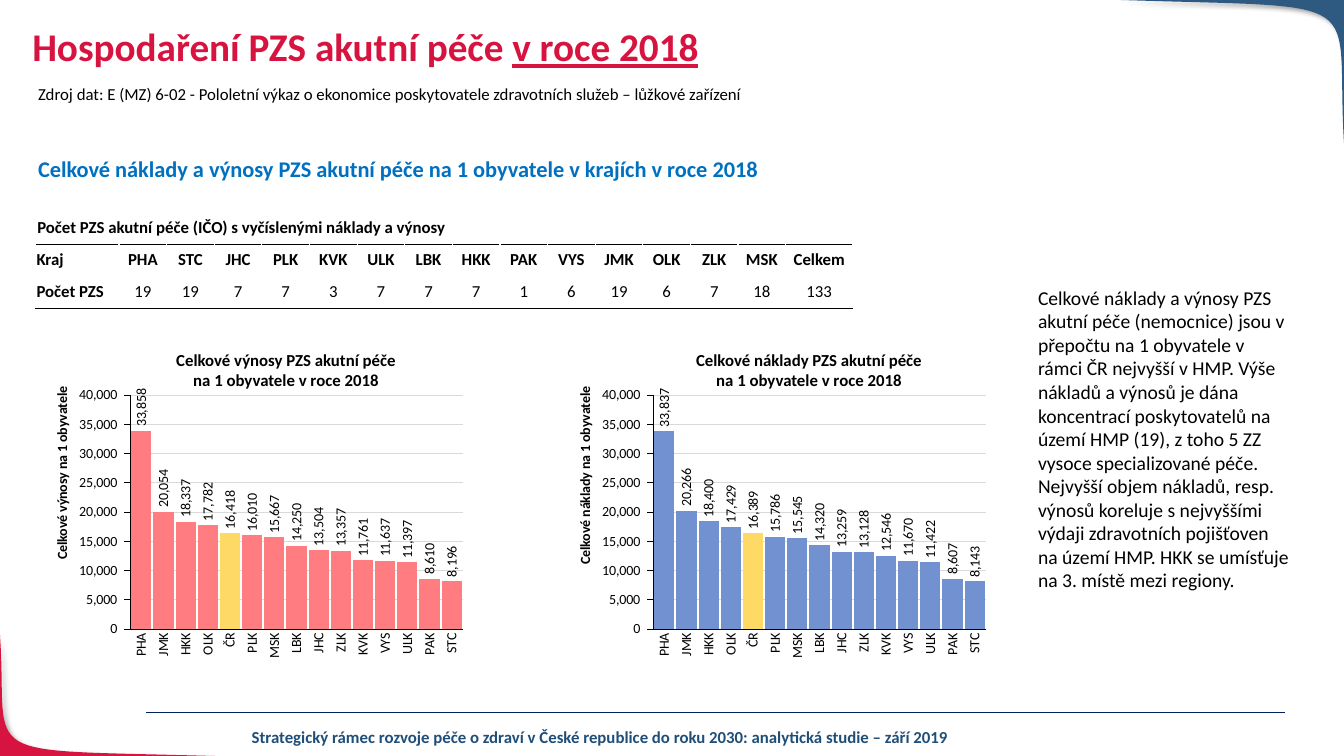
import pptx
import pptx.chart.data
import pptx.dml.color
import pptx.enum.chart
import pptx.enum.shapes
import pptx.enum.text
import pptx.oxml
import pptx.oxml.ns
import pptx.oxml.xmlchemy
import pptx.util

Cm = pptx.util.Cm
Pt = pptx.util.Pt
RGBColor = pptx.dml.color.RGBColor
ALIGN = pptx.enum.text.PP_ALIGN
ANCHOR = pptx.enum.text.MSO_ANCHOR
qn = pptx.oxml.ns.qn

BLACK = RGBColor(0x00, 0x00, 0x00)
WHITE = RGBColor(0xFF, 0xFF, 0xFF)
CRIMSON = RGBColor(0xD7, 0x14, 0x40)
STEEL = RGBColor(0x2E, 0x59, 0x80)
NAVY = RGBColor(0x00, 0x20, 0x60)
FOOTER_BLUE = RGBColor(0x1F, 0x4E, 0x79)
HEADING_BLUE = RGBColor(0x00, 0x70, 0xC0)
PINK = RGBColor(0xFF, 0x7C, 0x80)
PERIWINKLE = RGBColor(0x71, 0x91, 0xD1)
YELLOW = RGBColor(0xFF, 0xD9, 0x66)
GRID_GREY = RGBColor(0xD9, 0xD9, 0xD9)

FONT = "Calibri"
NUMBER_FORMAT = "#,##0_ ;[Red]\\-#,##0\\ "
NATIONAL = "ČR"
REGIONS = "PHA JMK HKK OLK ČR PLK MSK LBK JHC ZLK KVK VYS ULK PAK STC".split()
REVENUES = [33858, 20054, 18337, 17782, 16418, 16010, 15667, 14250,
            13504, 13357, 11761, 11637, 11397, 8610, 8196]
COSTS = [33837, 20266, 18400, 17429, 16389, 15786, 15545, 14320,
         13259, 13128, 12546, 11670, 11422, 8607, 8143]
PROVIDER_ROWS = [
    "Kraj PHA STC JHC PLK KVK ULK LBK HKK PAK VYS JMK OLK ZLK MSK Celkem".split(),
    ["Počet PZS", *"19 19 7 7 3 7 7 7 1 6 19 6 7 18 133".split()],
]
COMMENTARY = (
    "Celkové náklady a výnosy PZS akutní péče (nemocnice) jsou v přepočtu na 1 obyvatele "
    "v rámci ČR nejvyšší v HMP. Výše nákladů a výnosů je dána koncentrací poskytovatelů "
    "na území HMP (19), z toho 5 ZZ vysoce specializované péče. Nejvyšší objem nákladů, "
    "resp. výnosů koreluje s nejvyššími výdaji zdravotních pojišťoven na území HMP. "
    "HKK se umísťuje na 3. místě mezi regiony."
)


def style_font(font, size, color=BLACK, bold=False):
    font.name = FONT
    font.size = Pt(size)
    font.bold = bold
    font.color.rgb = color


def add_text(slide, box, lines, size, color=BLACK, bold=False,
             align=ALIGN.LEFT, anchor=ANCHOR.TOP, wrap=True):
    frame = slide.shapes.add_textbox(*map(Cm, box)).text_frame
    frame.word_wrap = wrap
    frame.vertical_anchor = anchor
    frame.text = "\n".join(lines)
    for paragraph in frame.paragraphs:
        paragraph.alignment = align
        style_font(paragraph.font, size, color, bold)


def add_corner(slide, box, color, rotation=0):
    left, top, width, height = map(Cm, box)
    controls = [(0, 0), (1.15, 0.06), (0.96, -0.06), (1, 1)]
    steps = 32

    def curve_point(t):
        weights = [(1 - t) ** 3, 3 * t * (1 - t) ** 2, 3 * t * t * (1 - t), t ** 3]
        x = sum(w * c[0] for w, c in zip(weights, controls))
        y = sum(w * c[1] for w, c in zip(weights, controls))
        return round(left + x * width), round(top + y * height)

    outline = slide.shapes.build_freeform(left, top)
    edge = [curve_point(step / steps) for step in range(1, steps + 1)]
    outline.add_line_segments(edge + [(left + width, top)], close=True)
    corner = outline.convert_to_shape()
    corner.rotation = rotation
    corner.fill.solid()
    corner.fill.fore_color.rgb = color
    corner.line.fill.background()
    corner.shadow.inherit = False
    effects = corner._element.spPr.find(qn("a:effectLst"))
    effects.append(pptx.oxml.parse_xml(
        f'<a:outerShdw {pptx.oxml.ns.nsdecls("a")} blurRad="{Pt(4)}" dist="{Pt(3)}" '
        'dir="2700000"><a:srgbClr val="000000"><a:alpha val="40000"/></a:srgbClr></a:outerShdw>'))


def add_footer(slide, box):
    left, top, width, height = box
    rule = slide.shapes.add_connector(
        pptx.enum.shapes.MSO_CONNECTOR.STRAIGHT,
        Cm(left), Cm(top), Cm(left + width), Cm(top))
    rule.line.color.rgb = NAVY
    rule.line.width = Pt(0.5)
    rule._element.spPr.append(pptx.oxml.xmlchemy.OxmlElement("a:effectLst"))
    add_text(slide, (left + 1.17, top + 0.25, 20.55, height - 0.25),
             ["Strategický rámec rozvoje péče o zdraví v České republice do roku 2030: "
              "analytická studie – září 2019"],
             12, FOOTER_BLUE, True, ALIGN.CENTER)


def add_heading(slide, box):
    left, top, width, height = box
    title = slide.shapes.title
    title.left, title.top, title.width, title.height = map(Cm, box)
    frame = title.text_frame
    frame.auto_size = pptx.enum.text.MSO_AUTO_SIZE.NONE
    frame.vertical_anchor = ANCHOR.TOP
    paragraph = frame.paragraphs[0]
    paragraph.alignment = ALIGN.LEFT
    paragraph.line_spacing = 0.9
    style_font(paragraph.font, 28, CRIMSON, True)
    paragraph.add_run().text = "Hospodaření PZS akutní péče "
    year = paragraph.add_run()
    year.text = "v roce 2018"
    year.font.underline = True
    add_text(slide, (left + 0.15, top + 1.4, 18.44, 0.76),
             ["Zdroj dat: E (MZ) 6-02 - Pololetní výkaz o ekonomice poskytovatele "
              "zdravotních služeb – lůžkové zařízení"], 12, wrap=False)
    add_text(slide, (left + 0.15, top + 3.2, 19.25, 0.94),
             ["Celkové náklady a výnosy PZS akutní péče na 1 obyvatele v krajích v roce 2018"],
             16, HEADING_BLUE, True)


def add_border(cell, side):
    cell._tc.get_or_add_tcPr().insert(0, pptx.oxml.parse_xml(
        f'<a:{side} {pptx.oxml.ns.nsdecls("a")} w="{Pt(0.75)}"><a:solidFill>'
        f'<a:srgbClr val="{BLACK}"/></a:solidFill></a:{side}>'))


def add_provider_table(slide, box):
    left, top, width, height = box
    add_text(slide, (left - 0.2, top - 0.84, 10.87, 0.76),
             ["Počet PZS akutní péče (IČO) s vyčíslenými náklady a výnosy"], 12, bold=True)
    table = slide.shapes.add_table(2, len(PROVIDER_ROWS[0]), *map(Cm, box)).table
    table.first_row = table.horz_banding = False
    first, last = 2.11, 1.69
    region = (width - first - last) / (len(PROVIDER_ROWS[0]) - 2)
    for index, column in enumerate(table.columns):
        column.width = Cm({0: first, len(table.columns) - 1: last}.get(index, region))
    table.rows[0].height = Cm(0.71)
    table.rows[1].height = Cm(height - 0.71)
    for r, values in enumerate(PROVIDER_ROWS):
        for c, value in enumerate(values):
            cell = table.cell(r, c)
            cell.text = value
            cell.vertical_anchor = ANCHOR.MIDDLE
            cell.margin_left = cell.margin_right = cell.margin_top = Cm(0.03)
            cell.margin_bottom = 0
            cell.fill.solid()
            cell.fill.fore_color.rgb = WHITE
            add_border(cell, "lnB" if r else "lnT")
            paragraph = cell.text_frame.paragraphs[0]
            paragraph.alignment = ALIGN.CENTER if c else ALIGN.LEFT
            style_font(paragraph.font, 12, bold=r == 0 or c == 0)


def turn_upright(element):
    body = element.find(".//" + qn("a:bodyPr"))
    body.set("rot", "-5400000")
    body.set("vert", "horz")


def manual_layout(target, **values):
    entries = "".join(f'<c:{key} val="{value}"/>' for key, value in values.items())
    return pptx.oxml.parse_xml(
        f'<c:layout {pptx.oxml.ns.nsdecls("c")}><c:manualLayout>{target}'
        f'<c:xMode val="edge"/><c:yMode val="edge"/>{entries}</c:manualLayout></c:layout>')


def place(parent, layout, index):
    for existing in parent.findall(qn("c:layout")):
        parent.remove(existing)
    parent.insert(index, layout)


def add_region_chart(slide, box, subject, values, color):
    left, top, width, height = box
    data = pptx.chart.data.CategoryChartData(number_format=NUMBER_FORMAT)
    data.categories = REGIONS
    data.add_series(f"Celkové {subject}", values)
    chart = slide.shapes.add_chart(
        pptx.enum.chart.XL_CHART_TYPE.COLUMN_CLUSTERED, *map(Cm, box), data).chart
    chart.has_legend = chart.has_title = False
    style_font(chart.font, 10)
    plot = chart.plots[0]
    plot.vary_by_categories = False
    plot.gap_width = 10
    bars = plot.series[0]
    bars.format.fill.solid()
    bars.format.fill.fore_color.rgb = color
    national = bars.points[REGIONS.index(NATIONAL)].format.fill
    national.solid()
    national.fore_color.rgb = YELLOW
    labels = bars.data_labels
    labels.show_value = True
    labels.number_format = NUMBER_FORMAT
    labels.number_format_is_linked = False
    labels.position = pptx.enum.chart.XL_LABEL_POSITION.OUTSIDE_END
    style_font(labels.font, 10)
    turn_upright(labels._element)

    ticks = pptx.enum.chart.XL_TICK_MARK
    for axis, mark in ((chart.category_axis, ticks.NONE), (chart.value_axis, ticks.OUTSIDE)):
        axis.major_tick_mark = mark
        axis.minor_tick_mark = ticks.NONE
        axis.format.line.color.rgb = BLACK
        axis.format.line.width = Pt(0.75)
        style_font(axis.tick_labels.font, 10)
    turn_upright(chart.category_axis._element)
    amounts = chart.value_axis
    amounts.minimum_scale, amounts.maximum_scale = 0, 40000
    amounts.tick_labels.number_format = NUMBER_FORMAT
    amounts.tick_labels.number_format_is_linked = False
    amounts.major_gridlines.format.line.color.rgb = GRID_GREY
    amounts.major_gridlines.format.line.width = Pt(0.75)
    axis_title = amounts.axis_title
    axis_title.text_frame.text = f"Celkové {subject} na 1 obyvatele"
    style_font(axis_title.text_frame.paragraphs[0].font, 10, bold=True)
    turn_upright(axis_title._element)
    place(axis_title._element, manual_layout("", x=0.05, y=0.01), 1)
    place(chart._chartSpace.chart.plotArea, manual_layout(
        '<c:layoutTarget val="inner"/>', x=0.23, y=0.05, w=0.75, h=0.83), 0)
    add_text(slide, (left + 2, top - 0.91, 9, 1.27),
             [f"Celkové {subject} PZS akutní péče", "na 1 obyvatele v roce 2018"],
             12, bold=True, align=ALIGN.CENTER)


def main():
    presentation = pptx.Presentation()
    presentation.slide_width, presentation.slide_height = Cm(33.87), Cm(19.05)
    slide = presentation.slides.add_slide(presentation.slide_layouts[5])
    add_corner(slide, (0, 16, 5.42, 3.05), CRIMSON, 180)
    add_corner(slide, (28.22, 0, 5.65, 3.6), STEEL)
    add_footer(slide, (3.68, 17.94, 28.71, 1))
    add_heading(slide, (0.56, 0.58, 29.21, 1.75))
    add_provider_table(slide, (0.89, 6.17, 20.6, 1.6))
    add_region_chart(slide, (0.71, 9.6, 11.18, 7.11), "výnosy", REVENUES, PINK)
    add_region_chart(slide, (13.89, 9.6, 11.18, 7.11), "náklady", COSTS, PERIWINKLE)
    add_text(slide, (25.91, 6.32, 6.88, 9.47), [COMMENTARY], 14, anchor=ANCHOR.MIDDLE)
    presentation.save("out.pptx")


if __name__ == "__main__":
    main()
